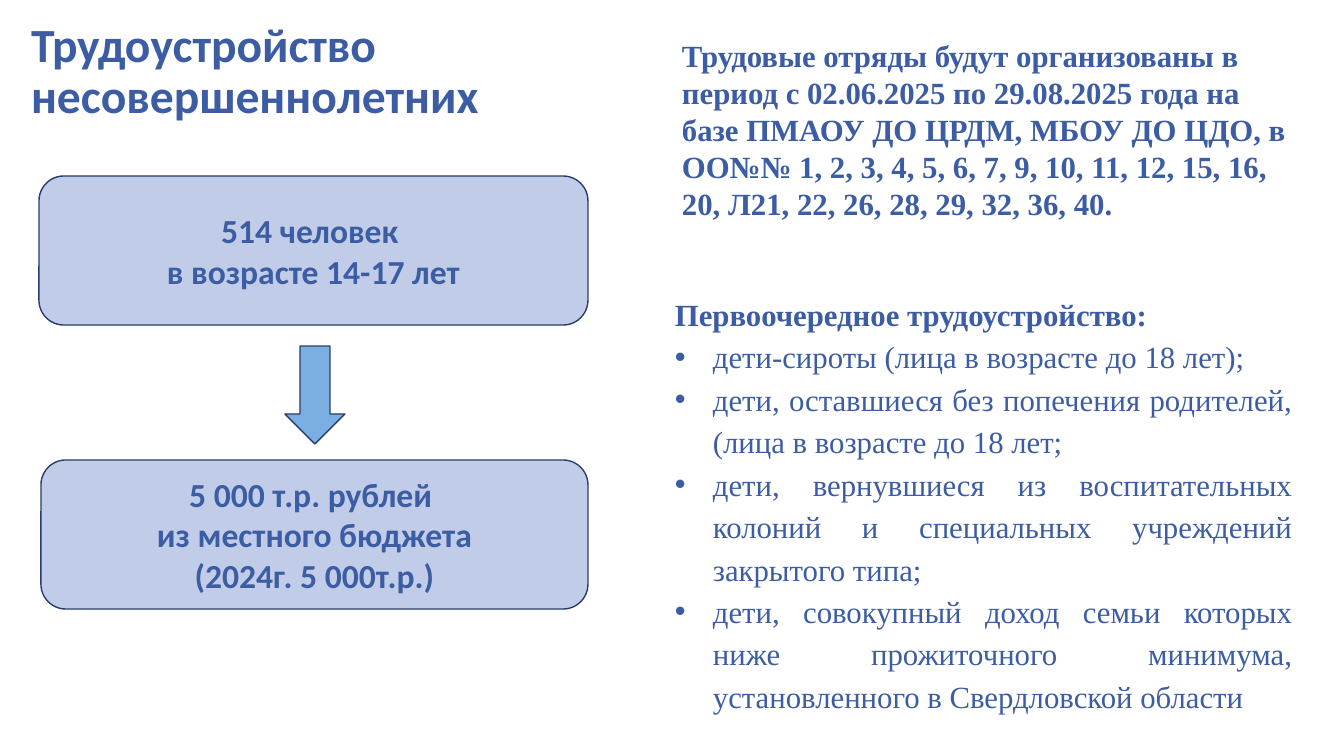
from lxml.etree import SubElement
from pptx import Presentation
from pptx.dml.color import RGBColor
from pptx.enum.shapes import MSO_SHAPE as Shape
from pptx.enum.text import MSO_ANCHOR as Anchor, MSO_AUTO_SIZE as AutoSize, PP_ALIGN as Align
from pptx.oxml.ns import qn
from pptx.util import Pt

EMU_PER_PX = 914400 / 100.8
TEXT_BLUE = "3C5CA3"
OUTLINE = "283D6D"
BOX_FILL = "C1CDE8"
ARROW_FILL = "7BAFE3"
SERIF = "Times New Roman"
SANS = "Calibri"

PERIOD = (
    "Трудовые отряды будут организованы в период с 02.06.2025 по 29.08.2025 года "
    "на базе ПМАОУ ДО ЦРДМ, МБОУ ДО ЦДО, в ОО№№ 1, 2, 3, 4, 5, 6, 7, 9, 10, 11, "
    "12, 15, 16, 20, Л21, 22, 26, 28, 29, 32, 36, 40."
)
PRIORITY_GROUPS = [
    "дети-сироты (лица в возрасте до 18 лет);",
    "дети, оставшиеся без попечения родителей, (лица в возрасте до 18 лет;",
    "дети, вернувшиеся из воспитательных колоний и специальных учреждений закрытого типа;",
    "дети, совокупный доход семьи которых ниже прожиточного минимума, "
    "установленного в Свердловской области",
]


def px(length):
    """Turn px into EMU."""
    return round(length * EMU_PER_PX)


def color(hex_code):
    """Turn a hex string into a colour."""
    return RGBColor.from_string(hex_code)


def add_bullet(paragraph, indent=38):
    """Give a paragraph a hanging bullet."""
    properties = paragraph._p.get_or_add_pPr()
    properties.set("marL", str(px(indent)))
    properties.set("indent", str(-px(indent)))
    SubElement(properties, qn("a:buFont"), typeface="Arial")
    SubElement(properties, qn("a:buChar"), char="•")


def write(frame, lines, font, size, align, bold=True, spacing=1.0, bullets=()):
    """Fill a text frame with plain lines, then regular bulleted ones."""
    frame.word_wrap = True
    entries = [(line, False) for line in lines] + [(line, True) for line in bullets]
    for number, (line, bulleted) in enumerate(entries):
        paragraph = frame.add_paragraph() if number else frame.paragraphs[0]
        paragraph.alignment = align
        paragraph.line_spacing = spacing
        paragraph.space_before = Pt(0)
        if bulleted:
            add_bullet(paragraph)
        run = paragraph.add_run()
        run.text = line
        run.font.name = font
        run.font.size = Pt(size)
        run.font.bold = bold and not bulleted
        run.font.color.rgb = color(TEXT_BLUE)


def add_figure(slide, kind, box, fill):
    """Add an outlined preset shape."""
    figure = slide.shapes.add_shape(kind, *map(px, box))
    figure.shadow.inherit = False
    figure.fill.solid()
    figure.fill.fore_color.rgb = color(fill)
    figure.line.color.rgb = color(OUTLINE)
    figure.line.width = Pt(1)
    return figure


def add_fact(slide, box, lines):
    """Add a rounded box with centred bold lines."""
    frame = add_figure(slide, Shape.ROUNDED_RECTANGLE, box, BOX_FILL).text_frame
    frame.vertical_anchor = Anchor.MIDDLE
    write(frame, lines, SANS, 24, Align.CENTER)


def add_note(slide, box, lines, align, **layout):
    """Add a white serif text panel."""
    panel = slide.shapes.add_textbox(*map(px, box))
    panel.fill.solid()
    panel.fill.fore_color.rgb = color("FFFFFF")
    write(panel.text_frame, lines, SERIF, 22, align, **layout)
    panel.text_frame.auto_size = AutoSize.SHAPE_TO_FIT_TEXT


def set_title(slide, box, text):
    """Place and format the slide title."""
    title = slide.shapes.title
    title.left, title.top, title.width, title.height = map(px, box)
    frame = title.text_frame
    frame.auto_size = AutoSize.NONE
    frame.vertical_anchor = Anchor.TOP
    write(frame, [text], SANS, 34, Align.JUSTIFY, spacing=0.9)


def main():
    """Build the slide on youth employment."""
    deck = Presentation()
    deck.slide_width, deck.slide_height = px(1344), px(756)
    slide = deck.slides.add_slide(deck.slide_layouts[5])

    set_title(slide, (21, 16, 606, 78), "Трудоустройство несовершеннолетних")
    add_fact(slide, (39, 176, 549, 149), ["514 человек ", "в возрасте 14-17 лет"])
    add_fact(slide, (41, 460, 547, 149),
             ["5 000 т.р. рублей ", "из местного бюджета", "(2024г. 5 000т.р.)"])
    add_note(slide, (672, 32, 637, 197), [PERIOD], Align.LEFT)
    add_note(slide, (665, 285, 637, 437), ["Первоочередное трудоустройство:"],
             Align.JUSTIFY, spacing=1.15, bullets=PRIORITY_GROUPS)
    arrow = add_figure(slide, Shape.RIGHT_ARROW, (266, 365, 98, 60), ARROW_FILL)
    arrow.rotation = 90

    deck.save("out.pptx")


if __name__ == "__main__":
    main()
